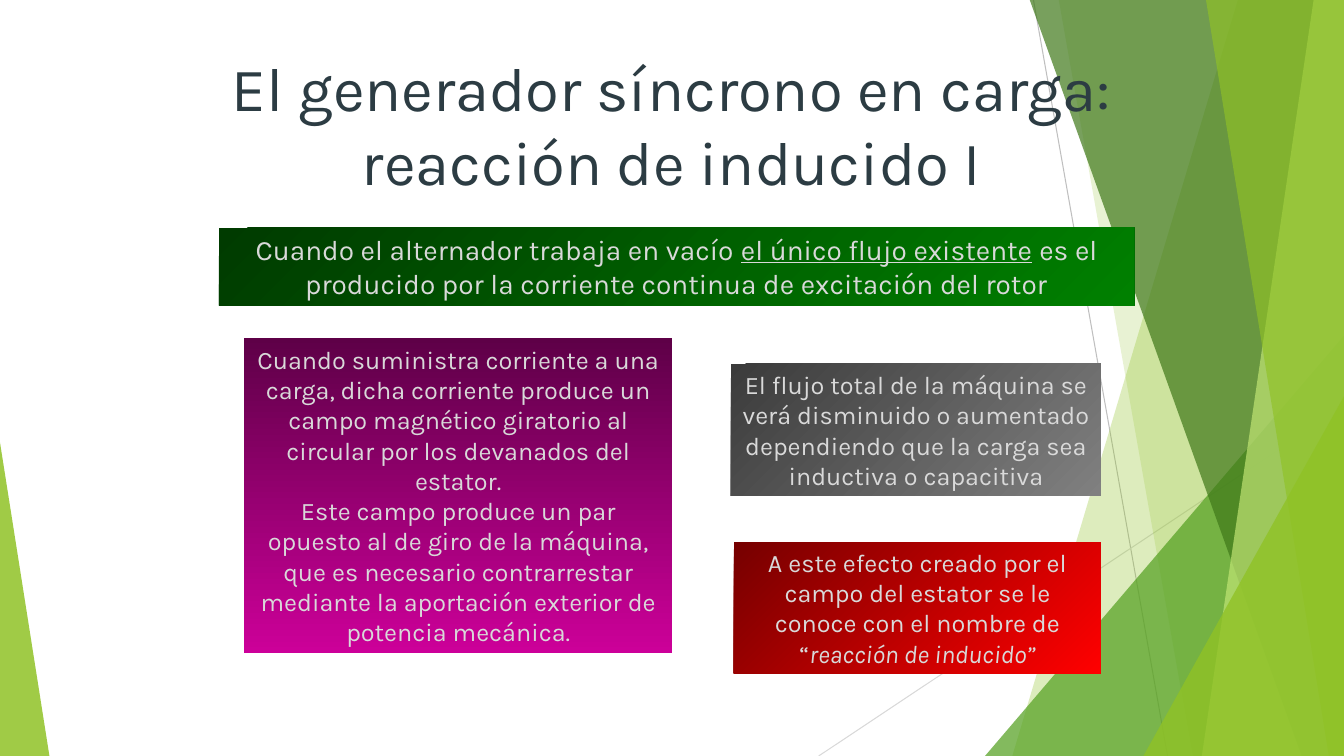
from lxml import etree
from pptx import Presentation
from pptx.dml.color import RGBColor
from pptx.enum.shapes import MSO_CONNECTOR, MSO_SHAPE
from pptx.enum.text import MSO_ANCHOR, MSO_AUTO_SIZE, PP_ALIGN
from pptx.oxml.ns import qn
from pptx.util import Inches, Pt

STRAIGHT = MSO_CONNECTOR.STRAIGHT
RECTANGLE = MSO_SHAPE.RECTANGLE
TRIANGLE = MSO_SHAPE.ISOSCELES_TRIANGLE
CENTER = PP_ALIGN.CENTER
MIDDLE = MSO_ANCHOR.MIDDLE
NO_AUTOFIT = MSO_AUTO_SIZE.NONE

FONT = "Karla"
WIDTH, HEIGHT = 13.33, 7.5
TOP = -0.01

LIME = RGBColor(0x90, 0xC2, 0x26)
PALE_LIME = RGBColor(0xC0, 0xE4, 0x74)
LEAF = RGBColor(0x54, 0xA0, 0x21)
FOREST = RGBColor(0x3F, 0x78, 0x19)
LINE_GRAY = RGBColor(0xBF, 0xBF, 0xBF)
LIGHT_GRAY = RGBColor(0xD9, 0xD9, 0xD9)
SLATE = RGBColor(0x2C, 0x3C, 0x43)
GREEN = RGBColor(0x00, 0x3B, 0x00), RGBColor(0x00, 0x80, 0x00)
GRAY = RGBColor(0x3B, 0x3B, 0x3B), RGBColor(0x80, 0x80, 0x80)
MAGENTA = RGBColor(0x5E, 0x00, 0x47), RGBColor(0xCC, 0x00, 0x99)
RED = RGBColor(0x76, 0x00, 0x00), RGBColor(0xFF, 0x00, 0x00)

DIAGONAL, DOWNWARD = 315, 270


def add_line(slide, start, end, color):
    line = slide.shapes.add_connector(
        STRAIGHT, *(Inches(value) for value in start + end))
    line.line.color.rgb = color
    line.line.width = Pt(0.75)
    etree.SubElement(line._element.spPr, qn("a:effectLst"))


def fill_translucent(shape, color, opacity):
    shape.shadow.inherit = False
    shape.line.fill.background()
    shape.fill.solid()
    shape.fill.fore_color.rgb = color
    color_element = shape._element.spPr.find(qn("a:solidFill"))[0]
    etree.SubElement(color_element, qn("a:alpha"), val=str(opacity * 1000))


def add_band(slide, top_x, bottom_x, color, opacity):
    builder = slide.shapes.build_freeform(Inches(top_x), Inches(TOP))
    corners = [(WIDTH, TOP), (WIDTH, HEIGHT), (bottom_x, HEIGHT)]
    builder.add_line_segments([(Inches(x), Inches(y)) for x, y in corners])
    fill_translucent(builder.convert_to_shape(), color, opacity)


def add_triangle(slide, left, width, height, apex, color, opacity):
    shape = slide.shapes.add_shape(
        TRIANGLE, Inches(left), Inches(HEIGHT - height), Inches(width), Inches(height))
    shape.adjustments[0] = apex
    fill_translucent(shape, color, opacity)


def add_backdrop(slide):
    add_line(slide, (10.25, 0), (11.58, HEIGHT), LINE_GRAY)
    add_line(slide, (WIDTH, 4.03), (8.12, HEIGHT), LIGHT_GRAY)
    add_band(slide, 12.28, 10.04, LIME, 30)
    add_band(slide, 10.5, 11.83, LIME, 20)
    add_triangle(slide, 9.77, 3.56, 4.17, 1, LEAF, 72)
    add_band(slide, 10.21, 12.91, FOREST, 70)
    add_band(slide, 13.03, 11.92, PALE_LIME, 70)
    add_band(slide, 11.96, 13.18, LIME, 65)
    add_triangle(slide, 11.34, 1.99, 3.57, 1, LIME, 80)
    add_triangle(slide, 0, 0.49, 3.11, 0, LIME, 85)


def format_run(run, size, color):
    run.font.name = FONT
    run.font.size = Pt(size)
    run.font.color.rgb = color


def place_title(slide, text):
    title = slide.shapes.title
    title.left, title.top = Inches(1.75), Inches(0.6)
    title.width, title.height = Inches(9.83), Inches(1.25)
    frame = title.text_frame
    frame.text = text
    frame.word_wrap = True
    frame.auto_size = NO_AUTOFIT
    frame.vertical_anchor = MIDDLE
    frame.paragraphs[0].alignment = CENTER
    format_run(frame.paragraphs[0].runs[0], 44, SLATE)
    slide.shapes._spTree.append(title._element)


def add_box(slide, bounds, colors, angle, size, paragraphs):
    box = slide.shapes.add_shape(RECTANGLE, *(Inches(value) for value in bounds))
    box.shadow.inherit = False
    box.line.fill.background()
    box.fill.gradient()
    box.fill.gradient_angle = angle
    for stop, color in zip(box.fill.gradient_stops, colors):
        stop.color.rgb = color
    frame = box.text_frame
    frame.word_wrap = True
    frame.vertical_anchor = MIDDLE
    for index, parts in enumerate(paragraphs):
        paragraph = frame.add_paragraph() if index else frame.paragraphs[0]
        paragraph.alignment = CENTER
        for part in parts:
            run = paragraph.add_run()
            run.text = part
            format_run(run, size, LIGHT_GRAY)
    return box


def main():
    presentation = Presentation()
    presentation.slide_width = Inches(WIDTH)
    presentation.slide_height = Inches(HEIGHT)
    slide = presentation.slides.add_slide(presentation.slide_layouts[5])

    add_backdrop(slide)
    place_title(slide, "El generador síncrono en carga: reacción de inducido I")

    no_load = add_box(slide, (2.17, 2.26, 9.08, 0.77), GREEN, DIAGONAL, 20, [
        ["Cuando el alternador trabaja en vacío ",
         "el único flujo existente",
         " es el producido por la corriente continua de excitación del rotor"]])
    no_load.text_frame.paragraphs[0].runs[1].font.underline = True

    add_box(slide, (7.25, 3.61, 3.67, 1.31), GRAY, DIAGONAL, 18, [
        ["El flujo total de la máquina se verá disminuido o aumentado "
         "dependiendo que la carga sea inductiva o capacitiva"]])

    add_box(slide, (2.42, 3.35, 4.25, 3.13), MAGENTA, DOWNWARD, 18, [
        ["Cuando suministra corriente a una carga, dicha corriente produce un campo "
         "magnético giratorio al circular por los devanados del estator."],
        ["Este campo produce un par opuesto al de giro de la máquina, que es necesario "
         "contrarrestar mediante la aportación exterior de potencia mecánica."]])

    reaction = add_box(slide, (7.28, 5.38, 3.64, 1.3), RED, DIAGONAL, 18, [
        ["A este efecto creado por el campo del estator se le conoce con el nombre de “",
         "reacción de inducido”"]])
    reaction.text_frame.paragraphs[0].runs[1].font.italic = True

    presentation.save("out.pptx")


if __name__ == "__main__":
    main()
